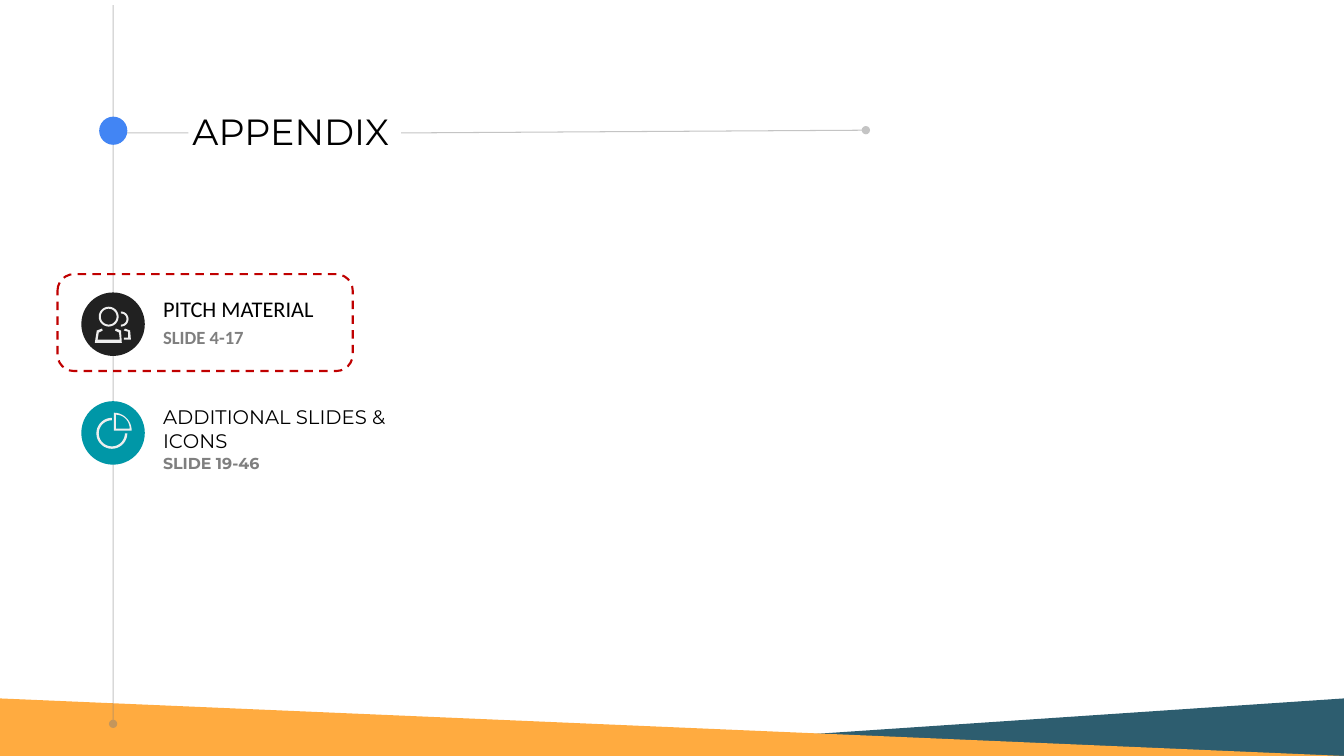
from dataclasses import dataclass
from math import cos, radians, sin

from lxml.etree import SubElement
from pptx import Presentation
from pptx.dml.color import RGBColor
from pptx.enum.dml import MSO_LINE
from pptx.enum.shapes import MSO_CONNECTOR, MSO_SHAPE
from pptx.enum.text import MSO_AUTO_SIZE, PP_ALIGN
from pptx.oxml.ns import qn
from pptx.shapes.autoshape import Shape
from pptx.shapes.shapetree import SlideShapes
from pptx.util import Cm, Pt

BLACK = RGBColor(0x00, 0x00, 0x00)
GRAY = RGBColor(0x7F, 0x7F, 0x7F)
SLATE = RGBColor(0x2D, 0x5D, 0x6F)
ORANGE = RGBColor(0xFF, 0xAB, 0x40)
BLUE = RGBColor(0x42, 0x85, 0xF4)
CHARCOAL = RGBColor(0x21, 0x21, 0x21)
TEAL = RGBColor(0x00, 0x97, 0xA7)
ICON = RGBColor(0xEE, 0xEE, 0xEE)
RED = RGBColor(0xC0, 0x00, 0x00)

Point = tuple[float, float]
Contour = list[Point]


@dataclass
class Preset:
    kind: MSO_SHAPE
    left: float
    top: float
    width: float
    height: float
    fill: RGBColor


@dataclass
class Rule:
    start: Point
    end: Point
    dotted: bool = True


@dataclass
class Label:
    text: str
    left: float
    top: float
    width: float
    height: float
    font: str
    size: float
    color: RGBColor = BLACK
    bold: bool = False
    align: PP_ALIGN = PP_ALIGN.LEFT


def arc(x: float, y: float, radius: float, start: int, end: int) -> Contour:
    step = 10 if end > start else -10
    angles = [radians(a) for a in range(start, end + step, step)]
    return [(x + radius * cos(a), y + radius * sin(a)) for a in angles]


def band(x: float, y: float, outer: float, inner: float, start: int, end: int) -> Contour:
    return arc(x, y, outer, start, end) + arc(x, y, inner, end, start)


def wedge(x: float, y: float, radius: float) -> Contour:
    return [(x, y)] + arc(x, y, radius, 270, 360)


def add_preset(shapes: SlideShapes, item: Preset) -> Shape:
    sp = shapes.add_shape(item.kind, Cm(item.left), Cm(item.top), Cm(item.width), Cm(item.height))
    sp.shadow.inherit = False
    sp.fill.solid()
    sp.fill.fore_color.rgb = item.fill
    sp.line.fill.background()
    return sp


def add_rule(shapes: SlideShapes, rule: Rule) -> None:
    ends = [Cm(v) for v in rule.start + rule.end]
    line = shapes.add_connector(MSO_CONNECTOR.STRAIGHT, *ends)
    line.line.color.rgb = GRAY
    line.line.width = Pt(0.75)
    props = line._element.spPr
    ln = props.find(qn("a:ln"))
    SubElement(ln.find(".//" + qn("a:srgbClr")), qn("a:alpha"), val="45000")
    if rule.dotted:
        SubElement(ln, qn("a:tailEnd"), type="oval")
    SubElement(props, qn("a:effectLst"))


def add_label(shapes: SlideShapes, label: Label) -> None:
    box = shapes.add_textbox(Cm(label.left), Cm(label.top), Cm(label.width), Cm(label.height))
    tf = box.text_frame
    tf.word_wrap = True
    tf.auto_size = MSO_AUTO_SIZE.SHAPE_TO_FIT_TEXT
    p = tf.paragraphs[0]
    p.text = label.text
    p.alignment = label.align
    p.font.name = label.font
    p.font.size = Pt(label.size)
    p.font.bold = label.bold
    p.font.color.rgb = label.color


def add_icon(shapes: SlideShapes, outlines: list[list[Contour]]) -> None:
    group = shapes.add_group_shape()
    for contours in outlines:
        points = [[(Cm(x), Cm(y)) for x, y in contour] for contour in contours]
        builder = group.shapes.build_freeform(*points[0][0])
        builder.add_line_segments(points[0][1:])
        for hole in points[1:]:
            builder.move_to(*hole[0])
            builder.add_line_segments(hole[1:])
        sp = builder.convert_to_shape()
        sp.shadow.inherit = False
        sp.fill.solid()
        sp.fill.fore_color.rgb = ICON
        sp.line.fill.background()


SLATE_WEDGE = Preset(MSO_SHAPE.RIGHT_TRIANGLE, 12.27, 17.6, 21.6, 1.45, SLATE)
ORANGE_WEDGE = Preset(MSO_SHAPE.RIGHT_TRIANGLE, 0, 17.6, 33.87, 1.45, ORANGE)
RULES = [
    Rule((2.85, 0.13), (2.85, 3.32)),
    Rule((2.85, 3.3), (2.85, 18.24)),
    Rule((10.11, 3.35), (21.82, 3.28)),
    Rule((2.87, 3.35), (4.75, 3.35), dotted=False),
]
DISCS = [
    Preset(MSO_SHAPE.OVAL, 2.5, 2.94, 0.71, 0.71, BLUE),
    Preset(MSO_SHAPE.OVAL, 2.05, 7.37, 1.6, 1.6, CHARCOAL),
    Preset(MSO_SHAPE.OVAL, 2.05, 10.11, 1.6, 1.6, TEAL),
]
LABELS = [
    Label("APPENDIX", 4.42, 2.62, 5.82, 1.37, "Montserrat", 26, align=PP_ALIGN.CENTER),
    Label("PITCH MATERIAL", 3.86, 7.32, 4.6, 0.94, "Calibri", 16),
    Label("SLIDE 4-17", 3.86, 8.08, 2.8, 0.84, "Calibri", 13.3, GRAY, True),
    Label("ADDITIONAL SLIDES & ICONS", 3.86, 10.08, 7.19, 1.45, "Montserrat", 14),
    Label("SLIDE 19-46", 3.86, 11.3, 3.73, 0.74, "Montserrat", 11.3, GRAY, True),
]
BACK_BODY = [(3.3, 8.56), (3.12, 8.56), (3.12, 8.51), (3.23, 8.51),
             (3.23, 8.36), (3.12, 8.33), (3.15, 8.28), (3.28, 8.33), (3.3, 8.56)]
FRONT_BODY = [(3.07, 8.64), (2.39, 8.64), (2.44, 8.33), (2.57, 8.28), (2.59, 8.33),
              (2.49, 8.38), (2.46, 8.56), (3.02, 8.56), (3, 8.38), (2.9, 8.33),
              (2.92, 8.28), (3.05, 8.33), (3.07, 8.64)]
PEOPLE = [
    [arc(2.74, 7.98, 0.25, 0, 360), arc(2.74, 7.98, 0.2, 360, 0)],
    [band(3.05, 8.04, 0.19, 0.14, -90, 90)],
    [BACK_BODY],
    [FRONT_BODY],
]
PIE = [
    [band(2.82, 10.92, 0.39, 0.33, 0, 270)],
    [wedge(2.87, 10.85, 0.45), wedge(2.92, 10.8, 0.35)],
]


def main() -> None:
    prs = Presentation()
    prs.slide_width, prs.slide_height = Cm(33.87), Cm(19.05)
    s = prs.slides.add_slide(prs.slide_layouts[6])
    shapes = s.shapes

    slate = add_preset(shapes, SLATE_WEDGE)
    slate._element.spPr.find(qn("a:xfrm")).set("flipH", "1")
    add_preset(shapes, ORANGE_WEDGE)
    for rule in RULES:
        add_rule(shapes, rule)
    for disc in DISCS:
        add_preset(shapes, disc)
    for label in LABELS:
        add_label(shapes, label)
    for icon in (PEOPLE, PIE):
        add_icon(shapes, icon)

    frame = add_preset(shapes, Preset(MSO_SHAPE.ROUNDED_RECTANGLE, 1.45, 6.91, 7.44, 2.44, RED))
    frame.adjustments[0] = 0.17
    frame.fill.background()
    frame.line.color.rgb = RED
    frame.line.width = Pt(1.5)
    frame.line.dash_style = MSO_LINE.DASH

    prs.save("out.pptx")


if __name__ == "__main__":
    main()
